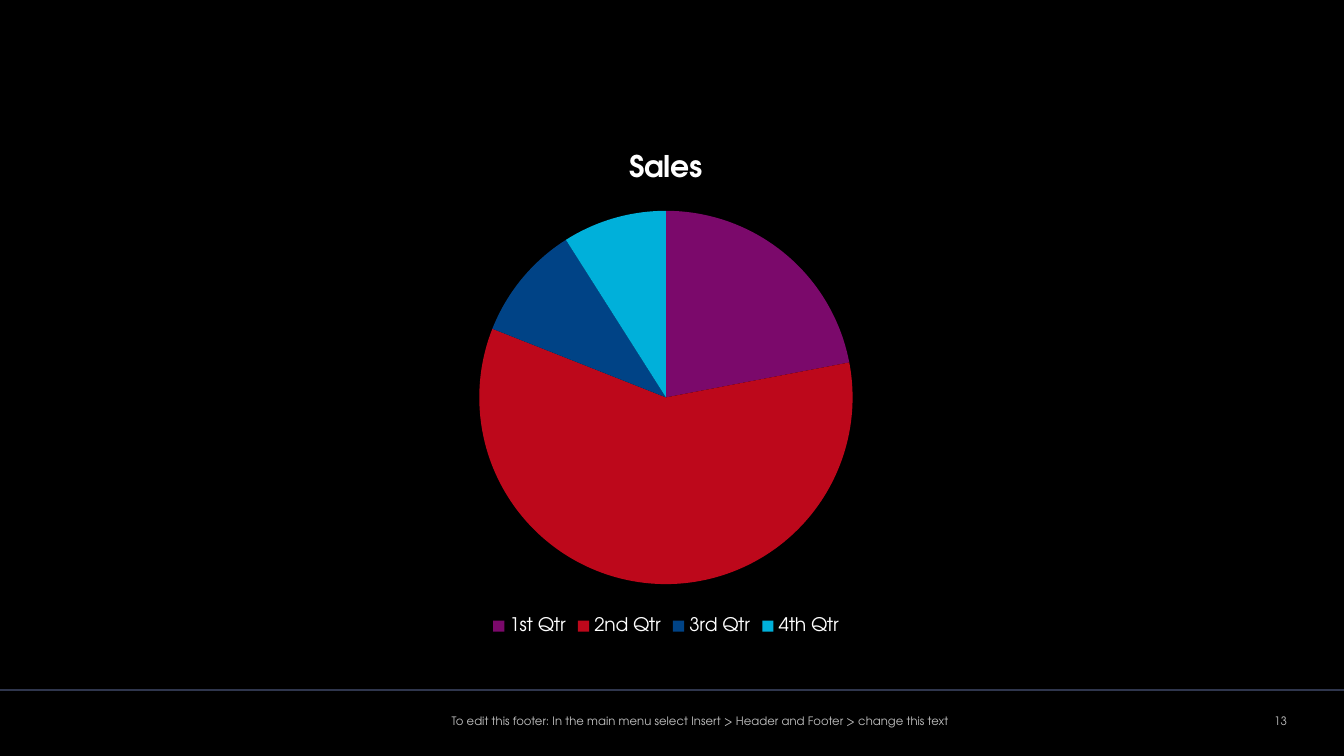
from lxml import etree
from pptx import Presentation
from pptx.chart.data import CategoryChartData
from pptx.dml.color import RGBColor
from pptx.enum.chart import XL_CHART_TYPE, XL_LEGEND_POSITION
from pptx.enum.shapes import MSO_CONNECTOR
from pptx.enum.text import MSO_ANCHOR, PP_ALIGN
from pptx.oxml.ns import qn
from pptx.util import Inches, Pt

PIE = XL_CHART_TYPE.PIE
BOTTOM = XL_LEGEND_POSITION.BOTTOM
STRAIGHT = MSO_CONNECTOR.STRAIGHT
MIDDLE = MSO_ANCHOR.MIDDLE
CENTER = PP_ALIGN.CENTER
RIGHT = PP_ALIGN.RIGHT

PX = 914400 / 134.4
FONT = "TeX Gyre Adventor"
BLACK = RGBColor(0x00, 0x00, 0x00)
WHITE = RGBColor(0xFF, 0xFF, 0xFF)
GREY = RGBColor(0xBF, 0xBF, 0xBF)
SLATE = RGBColor(0x2F, 0x36, 0x4D)
PURPLE = RGBColor(0x7B, 0x09, 0x6B)
RED = RGBColor(0xBD, 0x08, 0x1B)
NAVY = RGBColor(0x00, 0x43, 0x86)
CYAN = RGBColor(0x00, 0xB0, 0xDA)

QUARTERS = [
    ("1st Qtr", 22, PURPLE),
    ("2nd Qtr", 59, RED),
    ("3rd Qtr", 10, NAVY),
    ("4th Qtr", 9, CYAN),
]
FOOTER = (
    "To edit this footer: In the main menu select Insert > "
    "Header and Footer > change this text"
)


def px(*lengths):
    return [round(length * PX) for length in lengths]


def style_font(font, size, color, bold=False):
    values = {"name": FONT, "size": Pt(size), "bold": bold}
    for name, value in values.items():
        setattr(font, name, value)
    font.color.rgb = color


def add_rule(slide, start, end):
    rule = slide.shapes.add_connector(STRAIGHT, *px(*start, *end))
    rule.line.color.rgb = SLATE
    rule.line.width = Pt(1)
    etree.SubElement(rule._element.spPr, qn("a:effectLst"))


def add_footer_text(slide, box, text, alignment, right_inset):
    frame = slide.shapes.add_textbox(*px(*box)).text_frame
    values = {
        "word_wrap": True,
        "vertical_anchor": MIDDLE,
        "margin_right": Inches(right_inset),
    }
    for name, value in values.items():
        setattr(frame, name, value)
    paragraph = frame.paragraphs[0]
    paragraph.alignment = alignment
    run = paragraph.add_run()
    run.text = text
    style_font(run.font, 6.2, GREY)


def add_sales_pie(slide, box):
    labels, shares, colors = zip(*QUARTERS)
    sales = CategoryChartData()
    sales.categories = labels
    sales.add_series("Sales", shares)
    chart = slide.shapes.add_chart(PIE, *px(*box), sales).chart
    style_font(chart.font, 10, WHITE)

    chart.has_title = True
    title = chart.chart_title
    title.include_in_layout = False
    heading = title.text_frame.paragraphs[0].add_run()
    heading.text = "Sales"
    style_font(heading.font, 16, WHITE, bold=True)

    chart.has_legend = True
    chart.legend.position = BOTTOM
    chart.legend.include_in_layout = False
    style_font(chart.legend.font, 10, WHITE)

    plot = chart.plots[0]
    plot.vary_by_categories = True
    for index, color in enumerate(colors):
        fill = plot.series[0].points[index].format.fill
        fill.solid()
        fill.fore_color.rgb = color


def main():
    deck = Presentation()
    deck.slide_width, deck.slide_height = px(1344, 756)
    slide = deck.slides.add_slide(deck.slide_layouts[6])
    slide.background.fill.solid()
    slide.background.fill.fore_color.rgb = BLACK

    add_rule(slide, (0, 690), (1348, 690))
    add_footer_text(slide, (1197, 699, 90, 44), "13", RIGHT, 0)
    add_footer_text(slide, (235, 699, 930, 44), FOOTER, CENTER, 0.1)
    add_sales_pie(slide, (56, 129, 1220, 511))
    deck.save("out.pptx")


if __name__ == "__main__":
    main()
